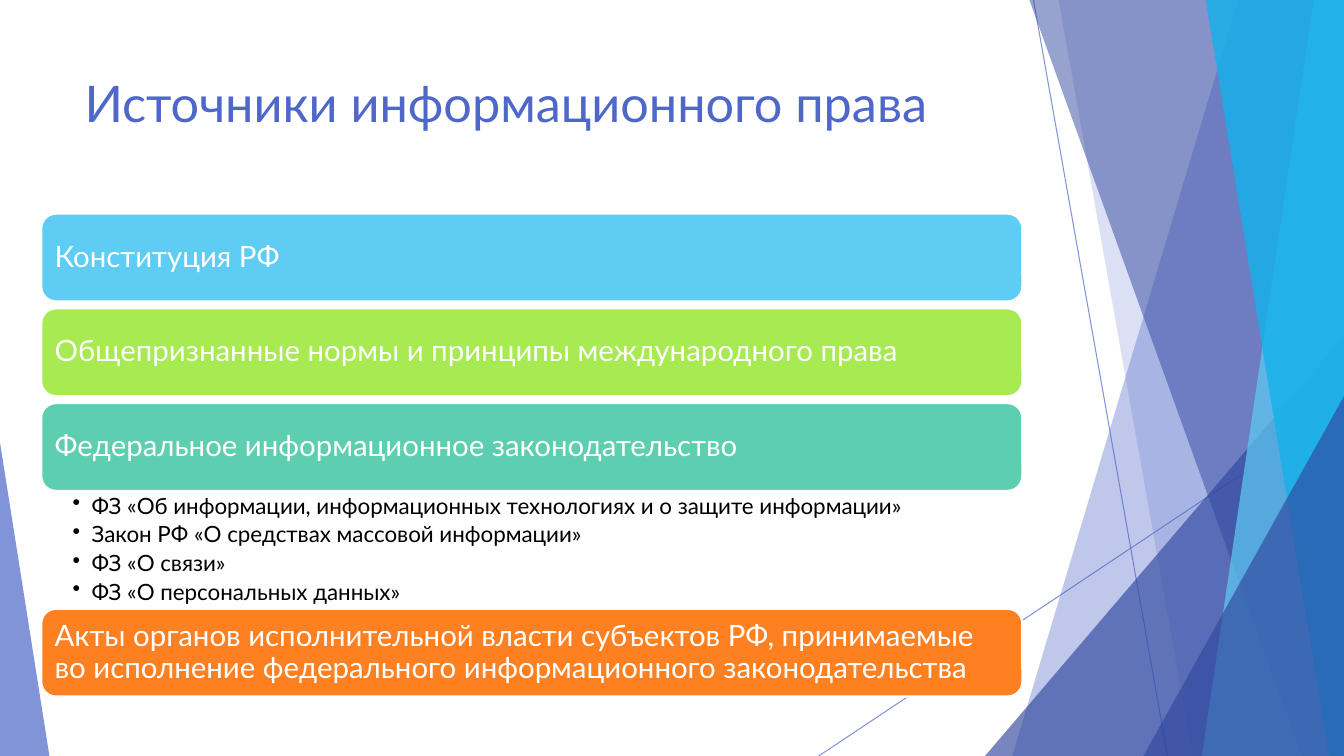
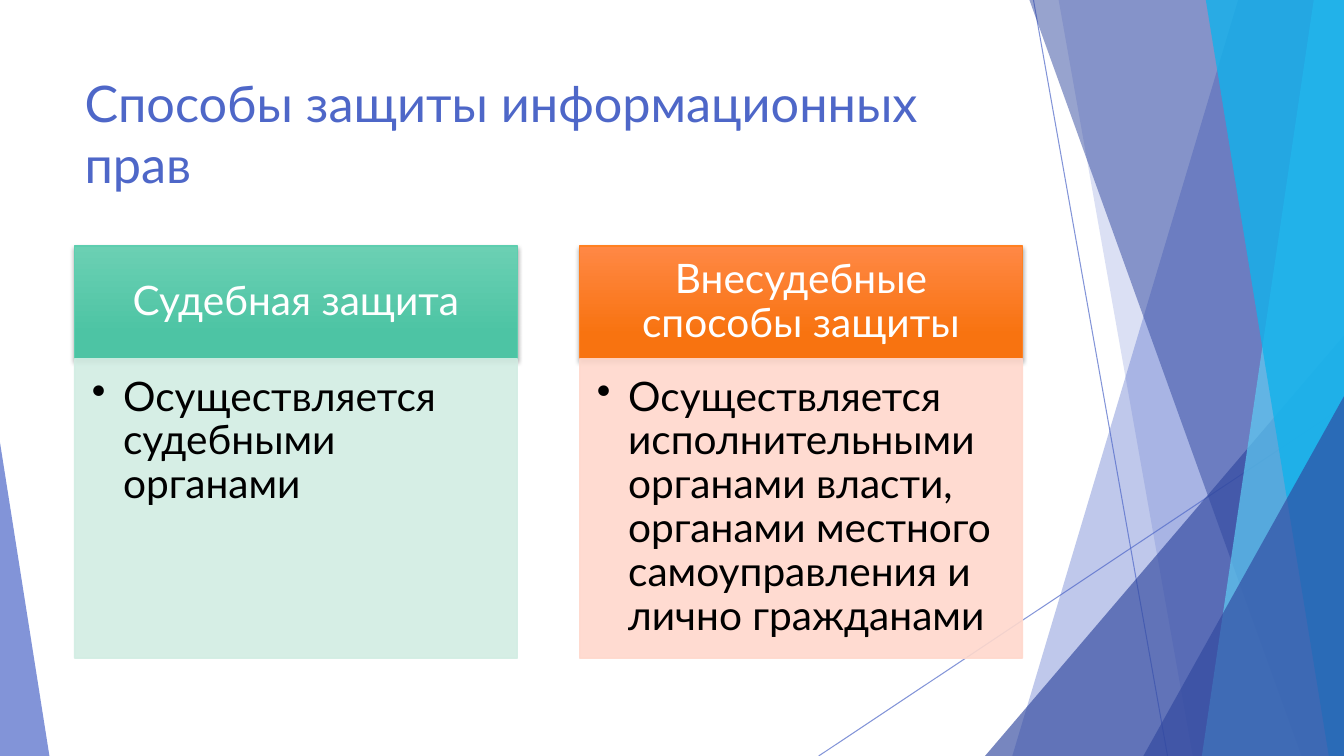
from dataclasses import dataclass
from typing import Optional, Sequence, Union

import pptx
import pptx.dml.color
import pptx.enum.shapes
import pptx.enum.text
import pptx.oxml.ns
import pptx.shapes.autoshape
import pptx.shapes.base
import pptx.slide
import pptx.text.text
import pptx.util
from lxml import etree

EMU_PER_PX = 9144
SLIDE_WIDTH, SLIDE_HEIGHT = 1333, 750
FONT = "Lato"
INDIGO, NAVY, SKY, AZURE = "4E67C8", "31489F", "5ECCF3", "12B2EB"
LIME, TEAL, ORANGE = "A7EA52", "5DCEAF", "FF8021"
WHITE, BLACK = "FFFFFF", "000000"

ShapeKind = pptx.enum.shapes.MSO_SHAPE
Align = pptx.enum.text.PP_ALIGN
Anchor = pptx.enum.text.MSO_ANCHOR
qn = pptx.oxml.ns.qn


@dataclass(frozen=True)
class Box:
    left: int
    top: int
    width: int
    height: int


@dataclass(frozen=True)
class Ray:
    top_x: int
    bottom_x: int
    color: str
    opacity: int


@dataclass(frozen=True)
class Corner:
    box: Box
    apex: int
    color: str
    opacity: int


@dataclass(frozen=True)
class Line:
    begin: tuple[int, int]
    end: tuple[int, int]


@dataclass(frozen=True)
class TextStyle:
    size: int
    color: str
    insets: tuple[int, int, int, int]
    anchor: Anchor = Anchor.TOP
    align: Align = Align.LEFT
    line_spacing: float = 0.9
    space_after: float = 0
    bullet_indent: int = 0


@dataclass(frozen=True)
class Source:
    name: str
    color: str
    laws: tuple[str, ...] = ()


@dataclass(frozen=True)
class Protection:
    name: str
    description: str
    gradient: tuple[str, str]
    border: str
    tint: str


DECOR_LINES = (Line((1025, 0), (1158, 750)), Line((1333, 403), (812, 750)))
DECOR: tuple[Union[Ray, Corner], ...] = (
    Ray(1228, 1004, INDIGO, 36),
    Ray(1050, 1183, INDIGO, 20),
    Corner(Box(977, 333, 356, 417), 1, NAVY, 66),
    Ray(1021, 1291, NAVY, 50),
    Ray(1303, 1192, SKY, 70),
    Ray(1196, 1318, AZURE, 80),
    Corner(Box(1134, 393, 199, 357), 1, NAVY, 66),
    Corner(Box(0, 439, 49, 311), 0, INDIGO, 70),
)

TITLE_BOX = Box(74, 67, 940, 144)
TITLE_STYLE = TextStyle(36, INDIGO, (10, 5, 10, 5), line_spacing=1)
SOURCE_STYLE = TextStyle(21, WHITE, (9, 9, 9, 9), Anchor.MIDDLE)
LAW_STYLE = TextStyle(16, BLACK, (31, 3, 16, 3), space_after=3.2, bullet_indent=19)
HEADER_STYLE = TextStyle(29, WHITE, (23, 13, 23, 13), Anchor.MIDDLE, Align.CENTER)
BODY_STYLE = TextStyle(29, BLACK, (17, 17, 23, 25), bullet_indent=31)

SOURCES_LEFT, SOURCES_TOP, SOURCES_WIDTH = 41, 212, 973
SOURCE_HEIGHT, SOURCE_PITCH = 87, 94
LAWS_OFFSET, LAWS_HEIGHT = 88, 116
SOURCES = (
    Source("Конституция РФ", SKY),
    Source("Общепризнанные нормы и принципы международного права", LIME),
    Source(
        "Федеральное информационное законодательство",
        TEAL,
        (
            "ФЗ «Об информации, информационных технологиях и о защите информации»",
            "Закон РФ «О средствах массовой информации»",
            "ФЗ «О связи»",
            "ФЗ «О персональных данных»",
        ),
    ),
    Source(
        "Акты органов исполнительной власти субъектов РФ, принимаемые "
        "во исполнение федерального информационного законодательства",
        ORANGE,
    ),
)

COLUMNS_LEFT, COLUMN_PITCH, COLUMN_WIDTH = 74, 501, 439
HEADER_TOP, HEADER_HEIGHT, BODY_HEIGHT = 244, 112, 297
PROTECTIONS = (
    Protection(
        "Судебная защита",
        "Осуществляется судебными органами",
        ("6BD0B3", "4DC4A4"),
        TEAL,
        "D2EDE3",
    ),
    Protection(
        "Внесудебные способы защиты",
        "Осуществляется исполнительными органами власти, "
        "органами местного самоуправления и лично гражданами",
        ("FF8845", "F87310"),
        ORANGE,
        "FFD8CC",
    ),
)


def px(length: int) -> pptx.util.Emu:
    return pptx.util.Emu(length * EMU_PER_PX)


def rgb(color: str) -> pptx.dml.color.RGBColor:
    return pptx.dml.color.RGBColor.from_string(color)


def frame(box: Box) -> tuple[pptx.util.Emu, ...]:
    return px(box.left), px(box.top), px(box.width), px(box.height)


def set_opacity(shape: pptx.shapes.base.BaseShape, percent: int) -> None:
    for color in shape._element.spPr.iter(qn("a:srgbClr")):
        etree.SubElement(color, qn("a:alpha"), val=str(percent * 1000))


def paint(shape: pptx.shapes.autoshape.Shape, fill: str,
          border: Optional[str] = None, border_width: float = 1) -> None:
    shape.shadow.inherit = False
    shape.fill.solid()
    shape.fill.fore_color.rgb = rgb(fill)
    if border is None:
        shape.line.fill.background()
    else:
        shape.line.color.rgb = rgb(border)
        shape.line.width = pptx.util.Pt(border_width)


def paint_gradient(shape: pptx.shapes.autoshape.Shape, colors: tuple[str, str]) -> None:
    shape.fill.gradient()
    shape.fill.gradient_angle = 270
    for stop, color, position in zip(shape.fill.gradient_stops, colors, (0, 0.78)):
        stop.color.rgb = rgb(color)
        stop.position = position


def add_drop_shadow(shape: pptx.shapes.autoshape.Shape) -> None:
    effects = shape._element.spPr.find(qn("a:effectLst"))
    shadow = etree.SubElement(effects, qn("a:outerShdw"), blurRad="38100",
                              dist="25400", dir="5400000", rotWithShape="0")
    color = etree.SubElement(shadow, qn("a:srgbClr"), val=BLACK)
    etree.SubElement(color, qn("a:alpha"), val="35000")


def add_bullet(paragraph: pptx.text.text._Paragraph, indent: int) -> None:
    properties = paragraph._p.get_or_add_pPr()
    properties.set("marL", str(px(indent)))
    properties.set("indent", str(-px(indent)))
    etree.SubElement(properties, qn("a:buChar"), char="•")


def write(shape: pptx.shapes.autoshape.Shape, lines: Sequence[str], style: TextStyle) -> None:
    text_frame = shape.text_frame
    text_frame.text = "\n".join(lines)
    text_frame.word_wrap = True
    text_frame.vertical_anchor = style.anchor
    (text_frame.margin_left, text_frame.margin_top,
     text_frame.margin_right, text_frame.margin_bottom) = map(px, style.insets)
    for paragraph in text_frame.paragraphs:
        if style.bullet_indent:
            add_bullet(paragraph, style.bullet_indent)
        paragraph.alignment = style.align
        paragraph.line_spacing = style.line_spacing
        paragraph.space_after = pptx.util.Pt(style.space_after)
        for run in paragraph.runs:
            run.font.name = FONT
            run.font.size = pptx.util.Pt(style.size)
            run.font.color.rgb = rgb(style.color)


def add_text(slide: pptx.slide.Slide, box: Box, lines: Sequence[str], style: TextStyle) -> None:
    write(slide.shapes.add_textbox(*frame(box)), lines, style)


def add_line(slide: pptx.slide.Slide, line: Line) -> None:
    connector = slide.shapes.add_connector(
        pptx.enum.shapes.MSO_CONNECTOR.STRAIGHT, *map(px, line.begin + line.end))
    connector.line.color.rgb = rgb(INDIGO)
    connector.line.width = pptx.util.Pt(0.75)
    set_opacity(connector, 70)
    etree.SubElement(connector._element.spPr, qn("a:effectLst"))


def add_decor(slide: pptx.slide.Slide, part: Union[Ray, Corner]) -> None:
    if isinstance(part, Ray):
        builder = slide.shapes.build_freeform(part.top_x, 0, EMU_PER_PX)
        builder.add_line_segments([(SLIDE_WIDTH, 0), (SLIDE_WIDTH, SLIDE_HEIGHT),
                                   (part.bottom_x, SLIDE_HEIGHT)])
        shape = builder.convert_to_shape()
    else:
        shape = slide.shapes.add_shape(ShapeKind.ISOSCELES_TRIANGLE, *frame(part.box))
        shape.adjustments[0] = part.apex
    paint(shape, part.color)
    set_opacity(shape, part.opacity)


def add_slide(presentation: pptx.presentation.Presentation, title: str) -> pptx.slide.Slide:
    slide = presentation.slides.add_slide(presentation.slide_layouts[6])
    for line in DECOR_LINES:
        add_line(slide, line)
    for part in DECOR:
        add_decor(slide, part)
    add_text(slide, TITLE_BOX, [title], TITLE_STYLE)
    return slide


def add_sources(slide: pptx.slide.Slide) -> None:
    top = SOURCES_TOP
    for source in SOURCES:
        box = Box(SOURCES_LEFT, top, SOURCES_WIDTH, SOURCE_HEIGHT)
        card = slide.shapes.add_shape(ShapeKind.ROUNDED_RECTANGLE, *frame(box))
        paint(card, source.color, WHITE, 1.5)
        write(card, [source.name], SOURCE_STYLE)
        if source.laws:
            laws_box = Box(SOURCES_LEFT, top + LAWS_OFFSET, SOURCES_WIDTH, LAWS_HEIGHT)
            add_text(slide, laws_box, source.laws, LAW_STYLE)
            top += LAWS_OFFSET + LAWS_HEIGHT
        else:
            top += SOURCE_PITCH


def add_protections(slide: pptx.slide.Slide) -> None:
    for index, protection in enumerate(PROTECTIONS):
        left = COLUMNS_LEFT + index * COLUMN_PITCH
        header_box = Box(left, HEADER_TOP, COLUMN_WIDTH, HEADER_HEIGHT)
        header = slide.shapes.add_shape(ShapeKind.RECTANGLE, *frame(header_box))
        paint(header, protection.border, protection.border)
        paint_gradient(header, protection.gradient)
        add_drop_shadow(header)
        write(header, [protection.name], HEADER_STYLE)
        body_box = Box(left, HEADER_TOP + HEADER_HEIGHT, COLUMN_WIDTH, BODY_HEIGHT)
        body = slide.shapes.add_shape(ShapeKind.RECTANGLE, *frame(body_box))
        paint(body, protection.tint, protection.tint)
        set_opacity(body, 90)
        write(body, [protection.description], BODY_STYLE)


def main() -> None:
    presentation = pptx.Presentation()
    presentation.slide_width = px(SLIDE_WIDTH)
    presentation.slide_height = px(SLIDE_HEIGHT)
    add_sources(add_slide(presentation, "Источники информационного права"))
    add_protections(add_slide(presentation, "Способы защиты информационных прав"))
    presentation.save("out.pptx")


if __name__ == "__main__":
    main()
